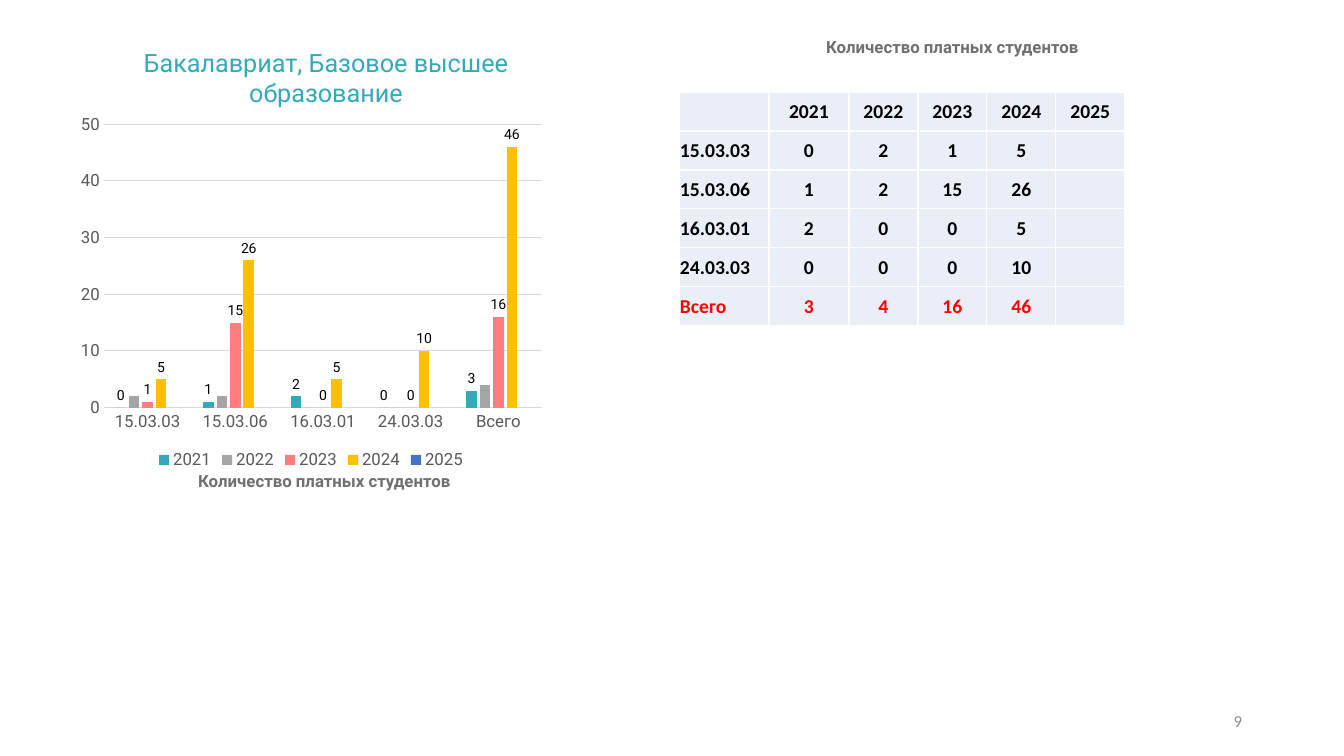
from lxml import etree
from pptx import Presentation
from pptx.chart.data import CategoryChartData
from pptx.dml.color import RGBColor
from pptx.enum.chart import XL_CHART_TYPE, XL_LABEL_POSITION, XL_LEGEND_POSITION, XL_TICK_MARK
from pptx.enum.text import MSO_ANCHOR, PP_ALIGN
from pptx.oxml import parse_xml
from pptx.oxml.ns import nsdecls, qn
from pptx.util import Pt

PX = 914400 / 100.8
LEFT, CENTER, RIGHT = PP_ALIGN.LEFT, PP_ALIGN.CENTER, PP_ALIGN.RIGHT
TOP, MIDDLE = MSO_ANCHOR.TOP, MSO_ANCHOR.MIDDLE
COLUMNS = XL_CHART_TYPE.COLUMN_CLUSTERED
BOTTOM = XL_LEGEND_POSITION.BOTTOM
OUTSIDE = XL_LABEL_POSITION.OUTSIDE_END
NO_TICK = XL_TICK_MARK.NONE

TITLE = {"name": "Roboto", "size": 18, "color": "32AABA"}
CAPTION = {"name": "Roboto", "size": 12, "color": "707070", "bold": True}
PAGE_NUMBER = {"name": "Calibri", "size": 12, "color": "8C8C8C"}
AXIS = {"name": "Roboto", "size": 12, "color": "595959"}
LABEL = {"name": "Roboto", "size": 10, "color": "000000"}
CELL = {"name": "Calibri", "size": 14, "color": "000000", "bold": True}
TOTAL_CELL = CELL | {"color": "FF0000"}
GRID_COLOR, CELL_FILL, CELL_BORDER = "D9D9D9", "EAEFF7", "FFFFFF"

CAPTION_TEXT = "Количество платных студентов"
TOTAL = "Всего"
PROGRAMMES = ["15.03.03", "15.03.06", "16.03.01", "24.03.03", TOTAL]
STUDENTS = {
    "2021": [0, 1, 2, 0, 3],
    "2022": [2, 2, 0, 0, 4],
    "2023": [1, 15, 0, 0, 16],
    "2024": [5, 26, 5, 10, 46],
    "2025": [None] * 5,
}
YEAR_COLORS = ["32AABA", "A5A5A5", "FF7C80", "FFC000", "4472C4"]
LABELLED_YEARS = {"2021", "2023", "2024"}
COLUMN_WIDTHS = [90, 80, 69, 69, 69, 69]
ROW_HEIGHT = 39


def px(*lengths):
    return [round(length * PX) for length in lengths]


def rgb(hex_color):
    return RGBColor.from_string(hex_color)


def style_font(font, style):
    for name, value in style.items():
        if name == "color":
            font.color.rgb = rgb(value)
        else:
            setattr(font, name, Pt(value) if name == "size" else value)


def add_text(page, place, text, style, align=CENTER, anchor=TOP):
    frame = page.shapes.add_textbox(*px(*place)).text_frame
    frame.word_wrap = True
    frame.vertical_anchor = anchor
    para = frame.paragraphs[0]
    para.alignment = align
    span = para.add_run()
    span.text = text
    style_font(span.font, style)


def style_line(line, color):
    line.color.rgb = rgb(color)
    line.width = Pt(0.75)


def set_plot_area(chart, **fractions):
    """Fix the inner plot area as fractions of the chart frame."""
    plot_area = chart._chartSpace.chart.plotArea
    for old in plot_area.findall(qn("c:layout")):
        plot_area.remove(old)
    layout = parse_xml(f"<c:layout {nsdecls('c')}><c:manualLayout/></c:layout>")
    settings = {"layoutTarget": "inner", "xMode": "edge", "yMode": "edge"} | fractions
    for name, value in settings.items():
        etree.SubElement(layout[0], qn(f"c:{name}")).set("val", str(value))
    plot_area.insert(0, layout)


def add_student_chart(page, place):
    data = CategoryChartData()
    data.categories = PROGRAMMES
    for year, counts in STUDENTS.items():
        data.add_series(year, counts)
    chart = page.shapes.add_chart(COLUMNS, *px(*place), data).chart
    chart.has_title = False
    style_font(chart.font, LABEL)
    set_plot_area(chart, x=0.07, y=0.05, w=0.91, h=0.77)

    chart.has_legend = True
    chart.legend.position = BOTTOM
    chart.legend.include_in_layout = False
    style_font(chart.legend.font, AXIS)

    for axis in (chart.category_axis, chart.value_axis):
        axis.major_tick_mark = axis.minor_tick_mark = NO_TICK
        style_font(axis.tick_labels.font, AXIS)
    style_line(chart.category_axis.format.line, GRID_COLOR)
    values = chart.value_axis
    values.format.line.fill.background()
    values.minimum_scale, values.maximum_scale, values.major_unit = 0, 50, 10
    style_line(values.major_gridlines.format.line, GRID_COLOR)

    plot = chart.plots[0]
    plot.vary_by_categories = False
    plot.gap_width, plot.overlap = 219, -27
    for series, color in zip(plot.series, YEAR_COLORS):
        series.format.fill.solid()
        series.format.fill.fore_color.rgb = rgb(color)
        if series.name in LABELLED_YEARS:
            labels = series.data_labels
            labels.show_value = True
            labels.position = OUTSIDE
            style_font(labels.font, LABEL)


def style_cell(cell):
    margins = {"margin_left": 1, "margin_right": 1, "margin_top": 1, "margin_bottom": 0}
    for name, value in margins.items():
        setattr(cell, name, *px(value))
    cell.vertical_anchor = MIDDLE
    properties = cell._tc.get_or_add_tcPr()
    for side in ("lnL", "lnR", "lnT", "lnB"):
        border = etree.SubElement(properties, qn(f"a:{side}"), w=str(Pt(1)))
        fill = etree.SubElement(border, qn("a:solidFill"))
        etree.SubElement(fill, qn("a:srgbClr"), val=CELL_BORDER)
    cell.fill.solid()
    cell.fill.fore_color.rgb = rgb(CELL_FILL)


def add_student_table(page, left, top):
    rows = [["", *STUDENTS]]
    rows += [[name, *counts] for name, *counts in zip(PROGRAMMES, *STUDENTS.values())]
    size = px(left, top, sum(COLUMN_WIDTHS), ROW_HEIGHT * len(rows))
    table = page.shapes.add_table(len(rows), len(COLUMN_WIDTHS), *size).table
    table.first_row = table.horz_banding = False
    for column, width in zip(table.columns, px(*COLUMN_WIDTHS)):
        column.width = width
    for row_index, row in enumerate(rows):
        style = TOTAL_CELL if row[0] == TOTAL else CELL
        for column_index, value in enumerate(row):
            cell = table.cell(row_index, column_index)
            style_cell(cell)
            para = cell.text_frame.paragraphs[0]
            para.alignment = CENTER if column_index else LEFT
            if value not in ("", None):
                span = para.add_run()
                span.text = str(value)
                style_font(span.font, style)


def main():
    deck = Presentation()
    deck.slide_width, deck.slide_height = px(1344, 756)
    page = deck.slides.add_slide(deck.slide_layouts[6])
    add_text(page, (950, 701, 302, 40), "9", PAGE_NUMBER, RIGHT, MIDDLE)
    add_text(page, (85, 42, 482, 40), "Бакалавриат, Базовое высшее образование", TITLE)
    add_student_chart(page, (70, 106, 482, 368))
    add_text(page, (56, 466, 537, 30), CAPTION_TEXT, CAPTION)
    add_student_table(page, 679, 92)
    add_text(page, (684, 32, 537, 30), CAPTION_TEXT, CAPTION)
    deck.save("out.pptx")


if __name__ == "__main__":
    main()
